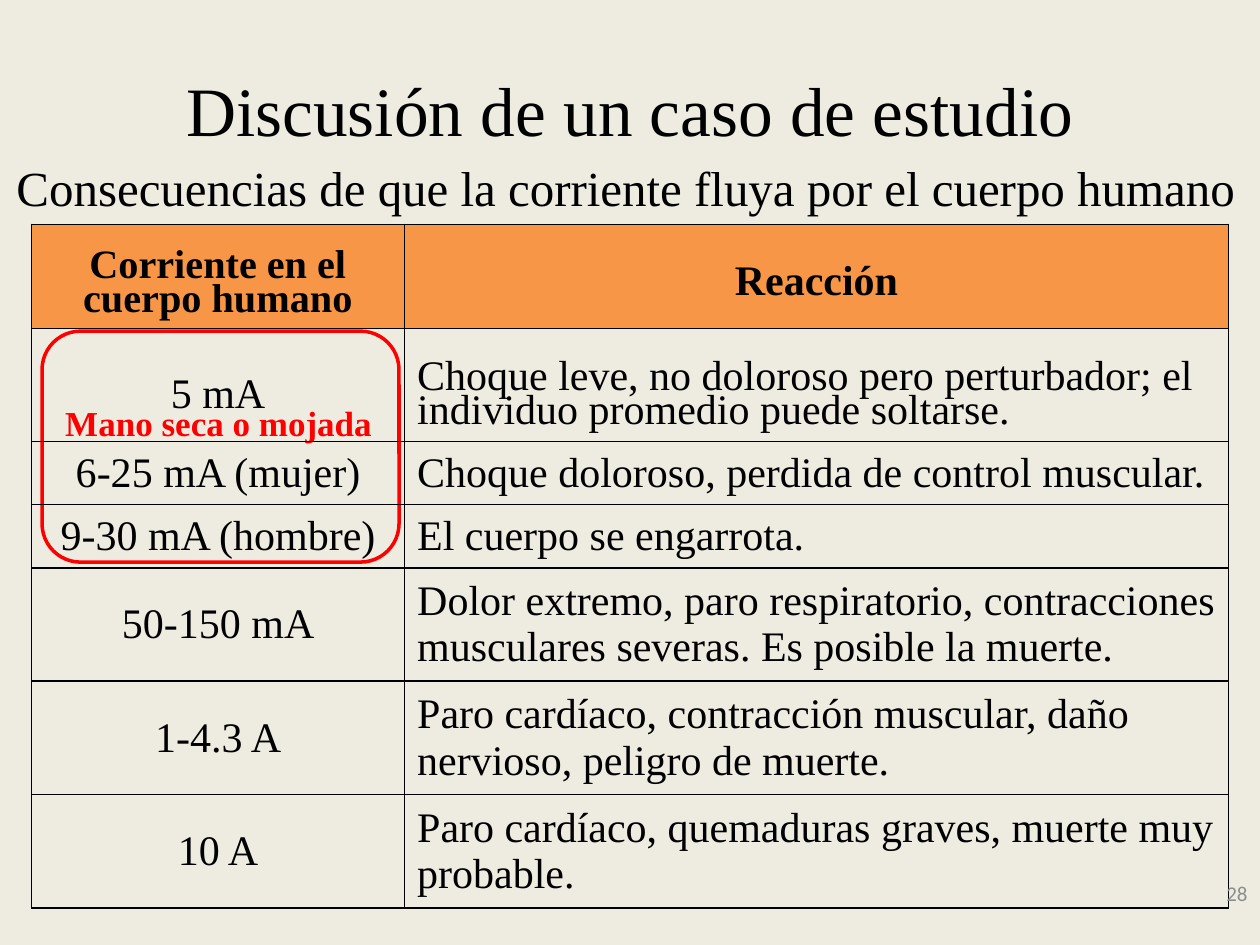
from lxml.etree import SubElement
from pptx import Presentation
from pptx.dml.color import RGBColor
from pptx.enum.shapes import MSO_SHAPE as SHAPE
from pptx.enum.text import MSO_ANCHOR as ANCHOR, MSO_AUTO_SIZE as AUTO, PP_ALIGN as ALIGN
from pptx.oxml.ns import qn
from pptx.util import Pt

BLACK, RED, ORANGE = "000000", "FF0000", "F79646"

# current, reaction, row height, line spacing, top insets of the two cells
HEADER = ("Corriente en el cuerpo humano", "Reacción", 59.4, 0.76, (13.7, 13.7))
ROWS = [
    ("5 mA", "Choque leve, no doloroso pero perturbador; el individuo promedio "
     "puede soltarse.", 64.8, 0.75, (18.7, 17.3)),
    ("6-25 mA (mujer)", "Choque doloroso, perdida de control muscular.", 36, None, (3.6, 3.6)),
    ("9-30 mA (hombre)", "El cuerpo se engarrota.", 36, None, (3.6, 3.6)),
    ("50-150 mA", "Dolor extremo, paro respiratorio, contracciones musculares "
     "severas. Es posible la muerte.", 64.8, None, (3.6, 3.6)),
    ("1-4.3 A", "Paro cardíaco, contracción muscular, daño nervioso, "
     "peligro de muerte.", 64.8, None, (3.6, 3.6)),
    ("10 A", "Paro cardíaco, quemaduras graves, muerte muy probable.", 64.8, None, (3.6, 3.6)),
]


def rgb(value):
    return RGBColor.from_string(value)


def write(tf, text, size=24, color=BLACK, bold=False, font="Times New Roman",
          align=ALIGN.LEFT, spacing=None):
    p = tf.paragraphs[0]
    p.alignment = align
    if spacing:
        p.line_spacing = spacing
    r = p.add_run()
    r.text = text
    r.font.size, r.font.bold, r.font.name = Pt(size), bold, font
    r.font.color.rgb = rgb(color)


def add_borders(cell, color=BLACK, width=1):
    tc_pr = cell._tc.get_or_add_tcPr()
    for side in ("lnL", "lnR", "lnT", "lnB"):
        ln = SubElement(tc_pr, qn(f"a:{side}"), w=str(Pt(width)))
        SubElement(SubElement(ln, qn("a:solidFill")), qn("a:srgbClr"), val=color)


class SlideBuilder:
    def __init__(self, prs, background):
        self.slide = prs.slides.add_slide(prs.slide_layouts[5])
        self.shapes = self.slide.shapes
        fill = self.slide.background.fill
        fill.solid()
        fill.fore_color.rgb = rgb(background)

    def title(self, text, x, y, w, h, **style):
        sp = self.shapes.title
        sp.left, sp.top, sp.width, sp.height = map(Pt, (x, y, w, h))
        tf = sp.text_frame
        tf.auto_size, tf.vertical_anchor = AUTO.NONE, ANCHOR.MIDDLE
        write(tf, text, **style)

    def text(self, text, x, y, w, h, wrap=True, inset=True, anchor=ANCHOR.TOP, **style):
        tf = self.shapes.add_textbox(*map(Pt, (x, y, w, h))).text_frame
        tf.word_wrap, tf.vertical_anchor = wrap, anchor
        if not inset:
            tf.margin_left = tf.margin_right = tf.margin_top = tf.margin_bottom = 0
        write(tf, text, **style)

    def outline(self, x, y, w, h, color, width):
        sp = self.shapes.add_shape(SHAPE.ROUNDED_RECTANGLE, *map(Pt, (x, y, w, h)))
        sp.shadow.inherit = False
        sp.fill.background()
        sp.line.color.rgb, sp.line.width = rgb(color), Pt(width)

    def table(self, rows, x, y, widths):
        height = sum(row[2] for row in rows)
        table = self.shapes.add_table(
            len(rows), len(widths), *map(Pt, (x, y, sum(widths), height))).table
        table.first_row = table.horz_banding = False
        for column, width in zip(table.columns, widths):
            column.width = Pt(width)
        for i, (current, reaction, row_height, spacing, insets) in enumerate(rows):
            table.rows[i].height = Pt(row_height)
            for j, text in enumerate((current, reaction)):
                cell, is_header = table.cell(i, j), i == 0
                cell.vertical_anchor, cell.margin_top = ANCHOR.MIDDLE, Pt(insets[j])
                add_borders(cell)
                if is_header:
                    cell.fill.solid()
                    cell.fill.fore_color.rgb = rgb(ORANGE)
                else:
                    cell.fill.background()
                write(cell.text_frame, text, bold=is_header, spacing=spacing,
                      size=23 if is_header and j == 0 else 24,
                      align=ALIGN.CENTER if is_header or j == 0 else ALIGN.LEFT)


def main():
    prs = Presentation()
    prs.slide_width, prs.slide_height = Pt(720), Pt(540)
    s = SlideBuilder(prs, "EEECE1")
    s.title("Discusión de un caso de estudio", 36, 39.6, 648, 44.6,
            size=39.6, align=ALIGN.CENTER)
    s.outline(24, 189.2, 204, 132, RED, 2)
    s.text("Mano seca o mojada", 30.2, 226.1, 190.8, 31.7, wrap=False,
           size=20, color=RED, bold=True)
    s.table([HEADER] + ROWS, 18, 128.2, (213.2, 470.8))
    s.text("Consecuencias de que la corriente fluya por el cuerpo humano",
           9.4, 90, 702, 33.8, inset=False, size=28, align=ALIGN.JUSTIFY)
    s.text("28", 558, 496.1, 162, 28.8, anchor=ANCHOR.MIDDLE,
           size=12, color="8C8C8C", font="Calibri", align=ALIGN.RIGHT)
    prs.save("out.pptx")


if __name__ == "__main__":
    main()
